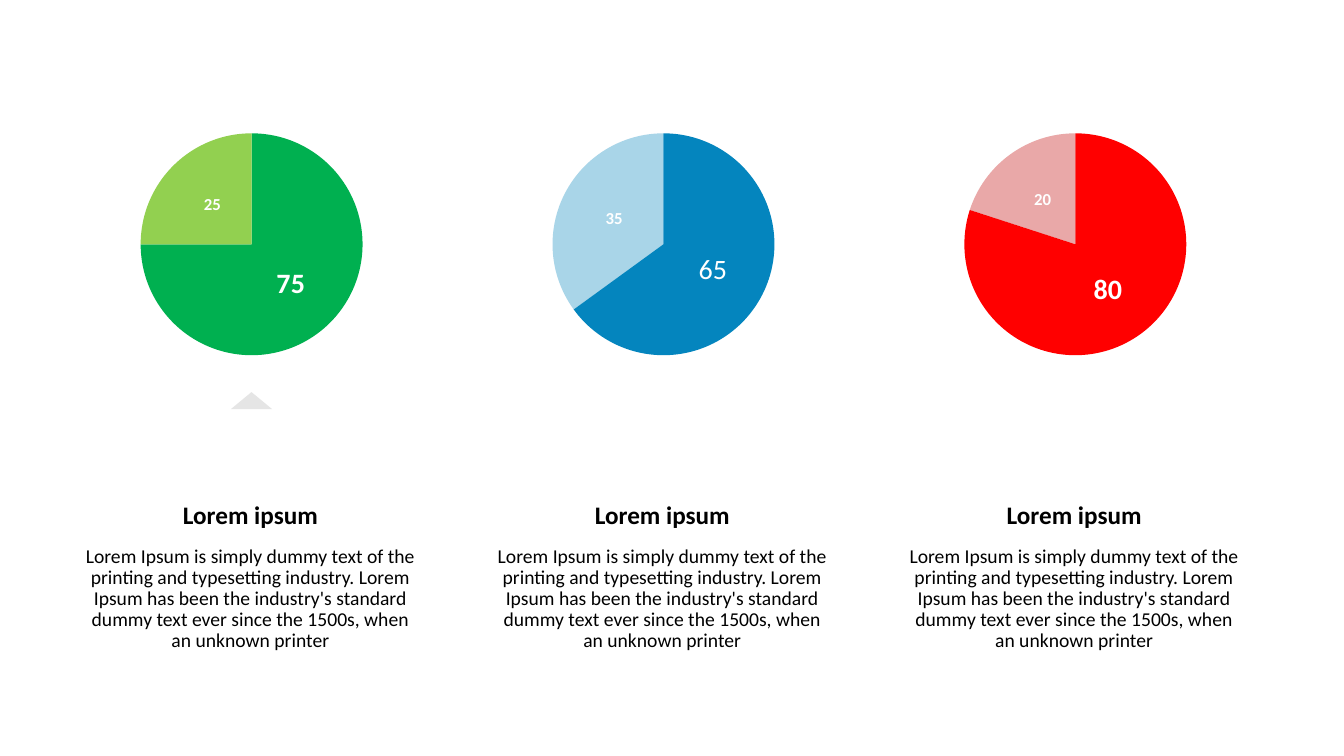
"""Build a slide of three captioned pie charts in even columns."""
from dataclasses import dataclass

from pptx import Presentation
from pptx.chart.chart import Chart
from pptx.chart.data import CategoryChartData
from pptx.dml.color import RGBColor
from pptx.enum.chart import XL_CHART_TYPE as CT, XL_LABEL_POSITION as LP
from pptx.enum.shapes import MSO_SHAPE
from pptx.enum.text import MSO_AUTO_SIZE, PP_ALIGN
from pptx.oxml import parse_xml
from pptx.oxml.ns import nsdecls, qn
from pptx.slide import Slide
from pptx.util import Pt

BLACK = RGBColor(0x00, 0x00, 0x00)
WHITE = RGBColor(0xFF, 0xFF, 0xFF)
GREY = RGBColor(0xE5, 0xE5, 0xE5)
GREEN = RGBColor(0x00, 0xB0, 0x50)
LIME = RGBColor(0x92, 0xD0, 0x50)
BLUE = RGBColor(0x04, 0x85, 0xBE)
RED = RGBColor(0xFF, 0x00, 0x00)
DARK_RED = RGBColor(0xC0, 0x00, 0x00)

FONT = "Calibri"
COLUMN_LEFT, COLUMN_STEP, COLUMN_WIDTH = 61.2, 294.2, 235.4
CHART_INDENT, CHART_TOP, CHART_WIDTH, CHART_HEIGHT = 32.4, 95, 171.4, 159.1
HEADING = "Lorem ipsum"
BODY = (
    "Lorem Ipsum is simply dummy text of the printing and typesetting industry. "
    "Lorem Ipsum has been the industry's standard dummy text ever since the 1500s, "
    "when an unknown printer"
)


@dataclass(frozen=True)
class Pie:
    share: int
    main: RGBColor
    rest: RGBColor
    rest_alpha: int = 100
    bold_main: bool = True


PIES = [
    Pie(75, GREEN, LIME),
    Pie(65, BLUE, BLUE, 34, bold_main=False),
    Pie(80, RED, DARK_RED, 34),
]


def set_plot_layout(chart: Chart) -> None:
    area = chart.element.find(".//" + qn("c:plotArea"))
    for old in area.findall(qn("c:layout")):
        area.remove(old)
    area.insert(0, parse_xml(
        f'<c:layout {nsdecls("c")}><c:manualLayout><c:layoutTarget val="inner"/>'
        '<c:xMode val="edge"/><c:yMode val="edge"/><c:x val="0.04"/><c:y val="0"/>'
        '<c:w val="0.925"/><c:h val="1"/></c:manualLayout></c:layout>'
    ))


def set_rest_alpha(chart: Chart, percent: int) -> None:
    for color in chart.element.xpath('.//c:dPt[c:idx/@val="1"]/c:spPr/a:solidFill/a:srgbClr'):
        color.append(parse_xml(f'<a:alpha {nsdecls("a")} val="{percent * 1000}"/>'))


def add_pie(s: Slide, pie: Pie, left: float) -> None:
    data = CategoryChartData()
    data.categories = ["1", "2"]
    data.add_series("Series 1", (pie.share, 100 - pie.share))
    chart = s.shapes.add_chart(
        CT.PIE, Pt(left), Pt(CHART_TOP), Pt(CHART_WIDTH), Pt(CHART_HEIGHT), data
    ).chart
    chart.has_legend = False
    chart.has_title = False
    chart.font.name, chart.font.size = FONT, Pt(10)
    chart.font.color.rgb = BLACK
    plot = chart.plots[0]
    plot.vary_by_categories = True
    styles = [(pie.main, 20, pie.bold_main), (pie.rest, 12, True)]
    for i, (color, size, bold) in enumerate(styles):
        point = plot.series[0].points[i]
        point.format.fill.solid()
        point.format.fill.fore_color.rgb = color
        point.format.line.fill.background()
        label = point.data_label
        label.font.name, label.font.size, label.font.bold = FONT, Pt(size), bold
        label.font.color.rgb = WHITE
        label.position = LP.CENTER
    set_plot_layout(chart)
    if pie.rest_alpha < 100:
        set_rest_alpha(chart, pie.rest_alpha)


def add_text(s: Slide, text: str, left: float, top: float, height: float,
             size: float, bold: bool = False, spacing: float | None = None) -> None:
    sp = s.shapes.add_textbox(Pt(left), Pt(top), Pt(COLUMN_WIDTH), Pt(height))
    tf = sp.text_frame
    tf.word_wrap = True
    tf.auto_size = MSO_AUTO_SIZE.SHAPE_TO_FIT_TEXT
    tf.margin_left = tf.margin_right = tf.margin_top = tf.margin_bottom = 0
    p = tf.paragraphs[0]
    p.text = text
    p.alignment = PP_ALIGN.CENTER
    if spacing:
        p.line_spacing = Pt(spacing)
    p.font.name, p.font.size, p.font.bold = FONT, Pt(size), bold
    p.font.color.rgb = BLACK


def add_pointer(s: Slide) -> None:
    sp = s.shapes.add_shape(
        MSO_SHAPE.ISOSCELES_TRIANGLE, Pt(164.9), Pt(280.1), Pt(29.5), Pt(12.2)
    )
    sp.shadow.inherit = False
    sp.fill.solid()
    sp.fill.fore_color.rgb = GREY
    sp.line.fill.background()


def main() -> None:
    prs = Presentation()
    prs.slide_width, prs.slide_height = Pt(960), Pt(540)
    s = prs.slides.add_slide(prs.slide_layouts[6])
    add_pointer(s)
    for i, pie in enumerate(PIES):
        left = COLUMN_LEFT + i * COLUMN_STEP
        add_pie(s, pie, left + CHART_INDENT)
        add_text(s, HEADING, left, 356.4, 21.6, 18, bold=True)
        add_text(s, BODY, left, 390.2, 75.6, 14, spacing=15)
    prs.save("out.pptx")


if __name__ == "__main__":
    main()
